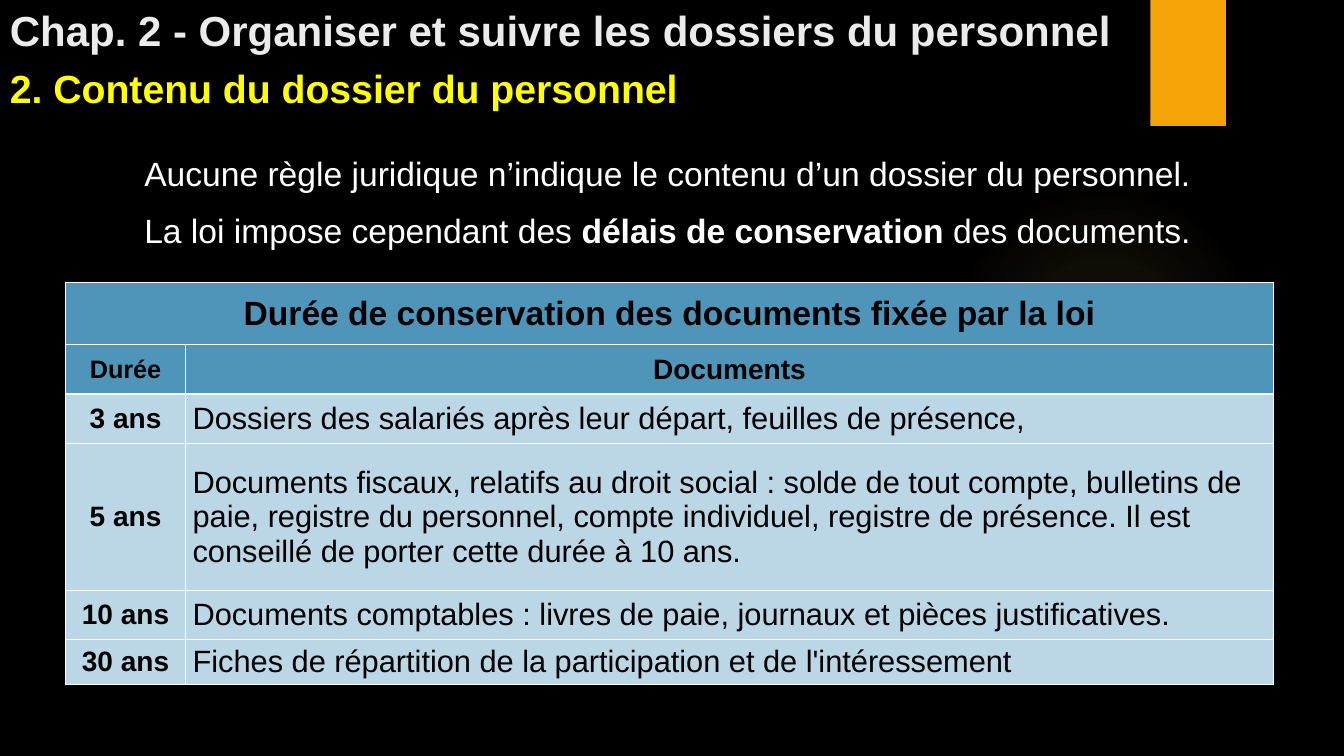
from lxml import etree
from pptx import Presentation
from pptx import util as u
from pptx.dml.color import RGBColor
from pptx.enum import shapes, text
from pptx.oxml import ns

# The slide is a grid of 100 columns by 100 rows
WIDE, HIGH = u.Inches(13.33), u.Inches(7.5)
FONT = "Arial"
BLACK = RGBColor(0, 0, 0)
WHITE = RGBColor(255, 255, 255)
PALE = RGBColor(0xEB, 0xEB, 0xEB)
YELLOW = RGBColor(255, 255, 0)
ORANGE = RGBColor(0xF5, 0xA4, 0x08)
GLOW = RGBColor(0xFA, 0xC9, 0x6A)
BLUE = RGBColor(0x4F, 0x95, 0xB9)
LIGHT = RGBColor(0xBB, 0xD6, 0xE4)
LEFT, MID = text.PP_ALIGN.LEFT, text.PP_ALIGN.CENTER

COLS = [8.93, 80.94]
ROWS = [8.27, 6.53, 6.53, 19.47, 6.53, 5.87]
TITLE = "Durée de conservation des documents fixée par la loi"
TERMS = [
    ("3 ans", "Dossiers des salariés après leur départ, feuilles de présence,"),
    ("5 ans", "Documents fiscaux, relatifs au droit social : solde de tout compte, "
              "bulletins de paie, registre du personnel, compte individuel, registre "
              "de présence. Il est conseillé de porter cette durée à 10 ans."),
    ("10 ans", "Documents comptables : livres de paie, journaux et pièces justificatives."),
    ("30 ans", "Fiches de répartition de la participation et de l'intéressement"),
]


def across(n):
    return round(WIDE * n / 100)


def down(n):
    return round(HIGH * n / 100)


def area(x, y, w, h):
    return across(x), down(y), across(w), down(h)


def add_run(para, words, size, color, bold=False):
    run = para.add_run()
    run.text = words
    run.font.name, run.font.size = FONT, u.Pt(size)
    run.font.bold, run.font.color.rgb = bold, color


def add_text(slide, box, paras, size, color, align=LEFT,
             anchor=text.MSO_ANCHOR.TOP, gap=0):
    """Each paragraph is a list of (words, bold) runs."""
    frame = slide.shapes.add_textbox(*area(*box)).text_frame
    frame.word_wrap, frame.vertical_anchor = True, anchor
    for i, runs in enumerate(paras):
        para = frame.add_paragraph() if i else frame.paragraphs[0]
        para.alignment = align
        para.space_before = u.Pt(gap if i else 0)
        para.space_after = u.Pt(gap)
        for words, bold in runs:
            add_run(para, words, size, color, bold)


def add_shape(slide, kind, box, color):
    shape = slide.shapes.add_shape(kind, *area(*box))
    shape.shadow.inherit = False
    shape.fill.solid()
    shape.fill.fore_color.rgb = color
    shape.line.fill.background()
    return shape


def add_glow(slide, box):
    """A disc that fades out from its centre."""
    shape = add_shape(slide, shapes.MSO_SHAPE.OVAL, box, GLOW)
    stops = "".join(
        f'<a:gs pos="{pos}000"><a:srgbClr val="{GLOW}">'
        f'<a:alpha val="{alpha}000"/></a:srgbClr></a:gs>'
        for pos, alpha in [(0, 7), (36, 6), (69, 0), (100, 0)])
    grad = etree.fromstring(
        f'<a:gradFill {ns.nsdecls("a")}><a:gsLst>{stops}</a:gsLst>'
        '<a:path path="circle"><a:fillToRect l="50000" t="50000" '
        'r="50000" b="50000"/></a:path></a:gradFill>')
    props = shape.element.spPr
    props.replace(props.find(ns.qn("a:solidFill")), grad)


def add_edges(cell):
    props = cell._tc.get_or_add_tcPr()
    for side in "LRTB":
        props.append(etree.fromstring(
            f'<a:ln{side} {ns.nsdecls("a")} w="{u.Pt(1)}"><a:solidFill>'
            f'<a:srgbClr val="{WHITE}"/></a:solidFill></a:ln{side}>'))


def fill_cell(cell, words, size, color, align=MID, bold=True):
    add_edges(cell)
    cell.fill.solid()
    cell.fill.fore_color.rgb = color
    cell.vertical_anchor = text.MSO_ANCHOR.MIDDLE
    cell.margin_left = cell.margin_right = u.Inches(0.07)
    cell.margin_top = cell.margin_bottom = 0
    if words:
        para = cell.text_frame.paragraphs[0]
        para.alignment = align
        add_run(para, words, size, BLACK, bold)


def add_terms(slide, x, y):
    box = area(x, y, sum(COLS), sum(ROWS))
    table = slide.shapes.add_table(len(ROWS), len(COLS), *box).table
    table.first_row = table.horz_banding = False
    for col, w in zip(table.columns, COLS):
        col.width = across(w)
    for row, h in zip(table.rows, ROWS):
        row.height = down(h)
    # Headings
    table.cell(0, 0).merge(table.cell(0, 1))
    fill_cell(table.cell(0, 0), TITLE, 24, BLUE)
    fill_cell(table.cell(0, 1), "", 24, BLUE)
    fill_cell(table.cell(1, 0), "Durée", 18, BLUE)
    fill_cell(table.cell(1, 1), "Documents", 20, BLUE)
    # Terms and their documents
    for i, (term, docs) in enumerate(TERMS, 2):
        fill_cell(table.cell(i, 0), term, 20, LIGHT)
        fill_cell(table.cell(i, 1), docs, 22, LIGHT, LEFT, False)


def main():
    deck = Presentation()
    deck.slide_width, deck.slide_height = WIDE, HIGH
    slide = deck.slides.add_slide(deck.slide_layouts[6])
    slide.background.fill.solid()
    slide.background.fill.fore_color.rgb = BLACK
    # Decoration
    add_glow(slide, (70.59, 24.4, 23.1, 41.07))
    add_shape(slide, shapes.MSO_SHAPE.RECTANGLE, (85.59, 0, 5.63, 16.67), ORANGE)
    # Headings
    add_text(slide, (0, 0, 95.95, 7.87),
             [[("Chap. 2 - Organiser et suivre les dossiers du personnel", True)]],
             30, PALE, anchor=text.MSO_ANCHOR.BOTTOM)
    add_text(slide, (0, 7.87, 90.47, 7.6),
             [[("2. Contenu du dossier du personnel", True)]], 28, YELLOW)
    # Introduction
    add_text(slide, (2.7, 19.6, 93.92, 14.4), [
        [("Aucune règle juridique n’indique le contenu d’un dossier du personnel.", False)],
        [("La loi impose cependant des ", False), ("délais de conservation ", True),
         ("des documents.", False)],
    ], 24, WHITE, MID, gap=6)
    # Retention table
    add_terms(slide, 4.88, 37.33)
    deck.save("out.pptx")


if __name__ == "__main__":
    main()
